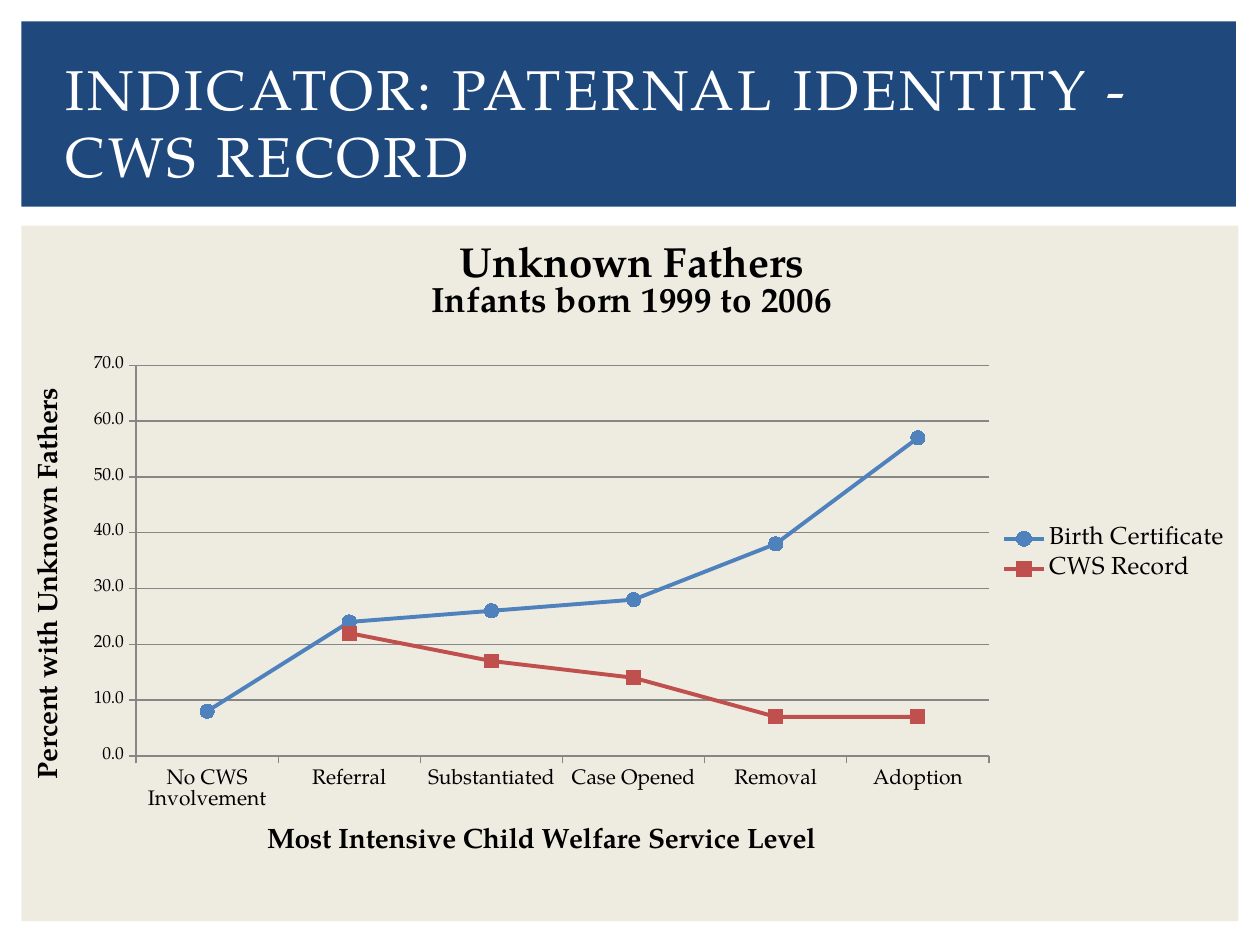
from dataclasses import dataclass

from lxml import etree
from pptx import Presentation
from pptx.chart.data import CategoryChartData
from pptx.dml.color import RGBColor
from pptx.enum.chart import (XL_CHART_TYPE, XL_LEGEND_POSITION,
                             XL_MARKER_STYLE, XL_TICK_MARK)
from pptx.enum.shapes import MSO_SHAPE
from pptx.enum.text import MSO_ANCHOR, PP_ALIGN
from pptx.oxml.ns import qn
from pptx.util import Inches, Pt

LINE = XL_CHART_TYPE.LINE_MARKERS
RIGHT = XL_LEGEND_POSITION.RIGHT
CIRCLE, SQUARE = XL_MARKER_STYLE.CIRCLE, XL_MARKER_STYLE.SQUARE
OUT, NONE = XL_TICK_MARK.OUTSIDE, XL_TICK_MARK.NONE
RECT = MSO_SHAPE.RECTANGLE
MIDDLE, LEFT = MSO_ANCHOR.MIDDLE, PP_ALIGN.LEFT


@dataclass(frozen=True)
class Theme:
    font: str = "TeX Gyre Pagella"
    navy: RGBColor = RGBColor(0x1F, 0x49, 0x7D)
    cream: RGBColor = RGBColor(0xEE, 0xEC, 0xE1)
    white: RGBColor = RGBColor(0xFF, 0xFF, 0xFF)
    black: RGBColor = RGBColor(0, 0, 0)
    grey: RGBColor = RGBColor(0x86, 0x86, 0x86)
    blue: RGBColor = RGBColor(0x4F, 0x81, 0xBD)
    red: RGBColor = RGBColor(0xC0, 0x50, 0x4D)
    head: int = 32
    title: int = 24
    sub: int = 20
    axis: int = 16
    key: int = 14
    label: int = 12
    tick: int = 10


THEME = Theme()
LEVELS = ["No CWS Involvement", "Referral", "Substantiated",
          "Case Opened", "Removal", "Adoption"]
SERIES = [
    ("Birth Certificate", [8, 24, 26, 28, 38, 57], THEME.blue, CIRCLE),
    ("CWS Record", [None, 22, 17, 14, 7, 7], THEME.red, SQUARE),
]


def style(font, size, color=THEME.black, bold=False):
    font.name, font.size, font.bold = THEME.font, Pt(size), bold
    font.color.rgb = color


def add_panel(slide, box, color):
    panel = slide.shapes.add_shape(RECT, *map(Inches, box))
    panel.shadow.inherit = False
    panel.fill.solid()
    panel.fill.fore_color.rgb = color
    panel.line.fill.background()


def add_head(slide, box, text):
    left, top, width, height = box
    add_panel(slide, box, THEME.navy)
    area = (left + 0.25, top + 0.22, width - 0.47, height - 0.32)
    frame = slide.shapes.add_textbox(*map(Inches, area)).text_frame
    frame.word_wrap = True
    frame.vertical_anchor = MIDDLE
    frame.text = text
    para = frame.paragraphs[0]
    para.alignment = LEFT
    run = para.runs[0]
    style(run.font, THEME.head, THEME.white)
    run.font._element.set("spc", "200")


def set_title(owner, lines, sizes):
    frame = owner.text_frame
    frame.text = "\n".join(lines)
    for para, size in zip(frame.paragraphs, sizes):
        style(para.runs[0].font, size, bold=True)


def place(parent, area, size):
    """Fix a chart part at an area in inches within a chart of this size."""
    layout = parent.find(qn("c:layout"))
    if layout is None:
        layout = etree.Element(qn("c:layout"))
        text = parent.find(qn("c:tx"))
        if text is None:
            parent.insert(0, layout)
        else:
            text.addnext(layout)
    for child in list(layout):
        layout.remove(child)
    manual = etree.SubElement(layout, qn("c:manualLayout"))
    if len(area) == 4:
        etree.SubElement(manual, qn("c:layoutTarget")).set("val", "inner")
    for side in "xy":
        etree.SubElement(manual, qn(f"c:{side}Mode")).set("val", "edge")
    for name, length, whole in zip("xywh", area, size * 2):
        etree.SubElement(manual, qn(f"c:{name}")).set("val", str(length / whole))


def style_axis(axis, text, font_size, spot, size):
    set_title(axis.axis_title, [text], [THEME.axis])
    place(axis.axis_title._element, spot, size)
    style(axis.tick_labels.font, font_size)
    axis.major_tick_mark, axis.minor_tick_mark = OUT, NONE
    axis.format.line.color.rgb = THEME.grey


def style_series(series, color, mark):
    series.smooth = False
    series.format.line.color.rgb = color
    series.format.line.width = Pt(2.25)
    marker = series.marker
    marker.style, marker.size = mark, 8
    marker.format.fill.solid()
    marker.format.fill.fore_color.rgb = color
    marker.format.line.color.rgb = color


def add_trend(slide, box):
    size = box[2:]
    data = CategoryChartData(number_format="0.0")
    data.categories = LEVELS
    for name, values, _, _ in SERIES:
        data.add_series(name, values)
    chart = slide.shapes.add_chart(LINE, *map(Inches, box), data).chart
    style(chart.font, THEME.tick)
    set_title(chart.chart_title, ["Unknown Fathers", "Infants born 1999 to 2006"],
              [THEME.title, THEME.sub])
    chart.chart_title.include_in_layout = False

    plot = chart.plots[0]
    plot.vary_by_categories = False
    for series, (_, _, color, mark) in zip(plot.series, SERIES):
        style_series(series, color, mark)
    place(chart._chartSpace.chart.plotArea, (0.91, 1.15, 6.77, 3.1), size)

    style_axis(chart.category_axis, "Most Intensive Child Welfare Service Level",
               THEME.label, (1.91, 4.76), size)
    scale = chart.value_axis
    style_axis(scale, "Percent with Unknown Fathers", THEME.tick,
               (0.06, 1.29), size)
    scale.minimum_scale, scale.maximum_scale, scale.major_unit = 0, 70, 10
    scale.tick_labels.number_format = "0.0"
    scale.tick_labels.number_format_is_linked = False
    scale.has_major_gridlines = True
    scale.major_gridlines.format.line.color.rgb = THEME.grey

    chart.has_legend = True
    chart.legend.position = RIGHT
    chart.legend.include_in_layout = False
    style(chart.legend.font, THEME.key)


def main():
    deck = Presentation()
    deck.slide_width, deck.slide_height = Inches(10), Inches(7.5)
    slide = deck.slides.add_slide(deck.slide_layouts[6])
    add_panel(slide, (0.17, 1.79, 9.66, 5.52), THEME.cream)
    add_head(slide, (0.17, 0.17, 9.64, 1.47),
             "INDICATOR: PATERNAL IDENTITY - CWS RECORD")
    add_trend(slide, (0.17, 1.75, 9.69, 5.29))
    deck.save("out.pptx")


if __name__ == "__main__":
    main()
